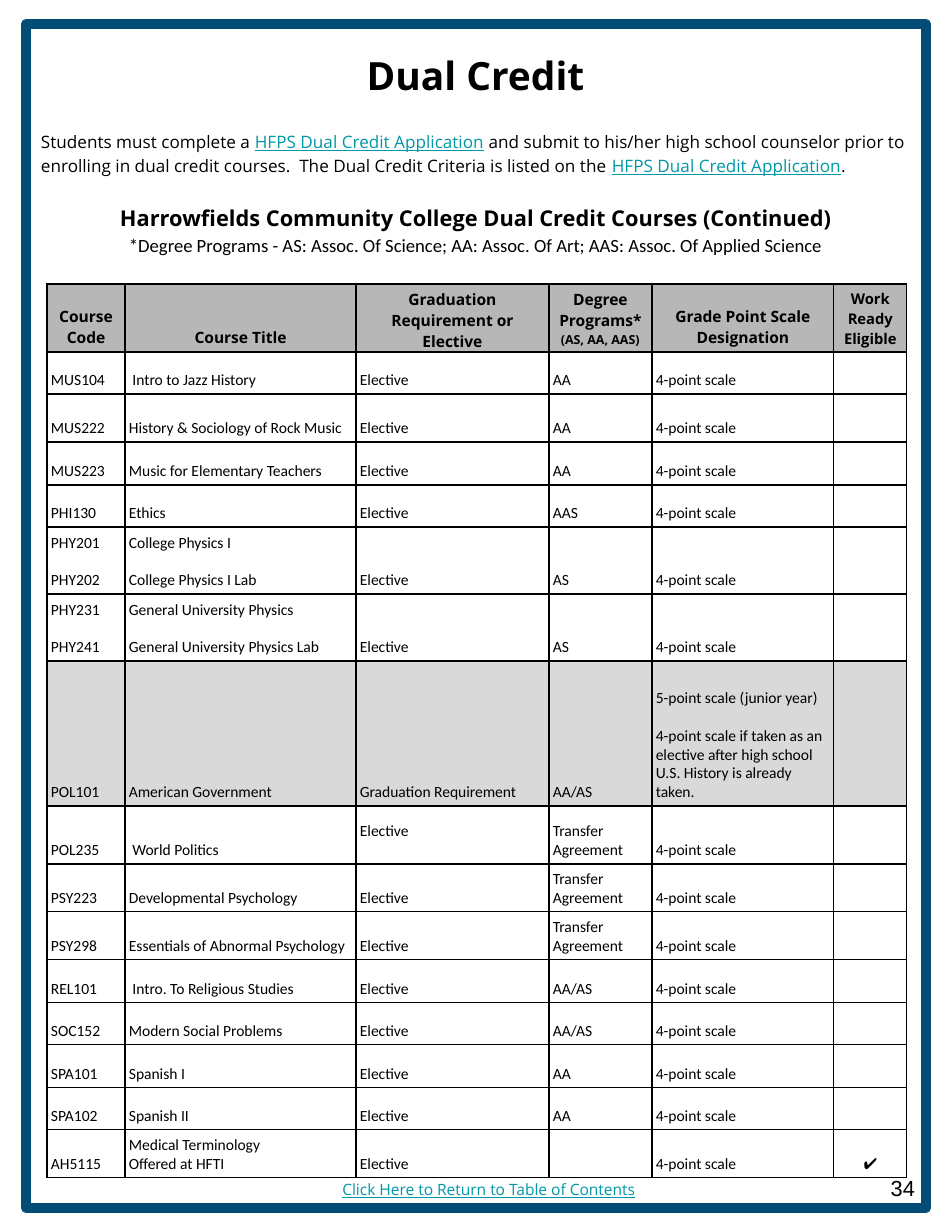
from lxml import etree
from pptx import Presentation
from pptx.dml.color import RGBColor
from pptx.enum.shapes import MSO_SHAPE
from pptx.enum.text import MSO_ANCHOR, PP_ALIGN
from pptx.oxml.ns import qn
from pptx.util import Emu, Inches, Pt

RECTANGLE = MSO_SHAPE.RECTANGLE
TOP, MIDDLE, BOTTOM = MSO_ANCHOR.TOP, MSO_ANCHOR.MIDDLE, MSO_ANCHOR.BOTTOM
LEFT, CENTER, RIGHT = PP_ALIGN.LEFT, PP_ALIGN.CENTER, PP_ALIGN.RIGHT

BLACK = RGBColor(0x00, 0x00, 0x00)
NAVY = RGBColor(0x02, 0x4C, 0x75)
TEAL = RGBColor(0x00, 0x97, 0xA7)
HEADER_GRAY = RGBColor(0xB7, 0xB7, 0xB7)
ROW_GRAY = RGBColor(0xD9, 0xD9, 0xD9)

HEADING_FONT, TABLE_FONT, NUMBER_FONT = "Open Sans", "Calibri", "Arial"
PX_PER_INCH = 112
CELL_INSET = 4
LINE_HEIGHT = 19
PARAGRAPH_GAP = Pt(12)

COLUMN_WIDTHS = [78, 231, 193, 103, 182, 73]
HEADER_HEIGHT = 68
HEADERS = [
    ("Course Code", 10, 4),
    ("Course Title", 10, 4),
    ("Graduation Requirement or Elective", 10, 0),
    ("Degree Programs*\n(AS, AA, AAS)", 10, 4),
    ("Grade Point Scale Designation", 10, 4),
    ("Work Ready Eligible", 9.5, 3),
]
ELECTIVE, FOUR_POINT = "Elective", "4-point scale"
TRANSFER = "Transfer Agreement"
POLITICS_GRADES = (
    "5-point scale (junior year)\n4-point scale if taken as an elective "
    "after high school U.S. History is already taken."
)
COURSES = [
    (42, "MUS104", " Intro to Jazz History", ELECTIVE, "AA", FOUR_POINT, ""),
    (48, "MUS222", "History & Sociology of Rock Music", ELECTIVE, "AA", FOUR_POINT, ""),
    (43, "MUS223", "Music for Elementary Teachers", ELECTIVE, "AA", FOUR_POINT, ""),
    (42, "PHI130", "Ethics", ELECTIVE, "AAS", FOUR_POINT, ""),
    (67, "PHY201\nPHY202", "College Physics I\nCollege Physics I Lab",
     ELECTIVE, "AS", FOUR_POINT, ""),
    (67, "PHY231\nPHY241", "General University Physics\nGeneral University Physics Lab",
     ELECTIVE, "AS", FOUR_POINT, ""),
    (145, "POL101", "American Government", "Graduation Requirement", "AA/AS",
     POLITICS_GRADES, ""),
    (58, "POL235", " World Politics", ELECTIVE, TRANSFER, FOUR_POINT, ""),
    (48, "PSY223", "Developmental Psychology", ELECTIVE, TRANSFER, FOUR_POINT, ""),
    (48, "PSY298", "Essentials of Abnormal Psychology", ELECTIVE, TRANSFER, FOUR_POINT, ""),
    (43, "REL101", " Intro. To Religious Studies", ELECTIVE, "AA/AS", FOUR_POINT, ""),
    (42, "SOC152", "Modern Social Problems", ELECTIVE, "AA/AS", FOUR_POINT, ""),
    (43, "SPA101", "Spanish I", ELECTIVE, "AA", FOUR_POINT, ""),
    (42, "SPA102", "Spanish II", ELECTIVE, "AA", FOUR_POINT, ""),
    (48, "AH5115", "Medical Terminology\nOffered at HFTI", ELECTIVE, "", FOUR_POINT, "✔"),
]
APPLICATION = "HFPS Dual Credit Application"


def px(length):
    return Emu(round(length * Inches(1) / PX_PER_INCH))


class SlideBuilder:
    def __init__(self, slide):
        self.slide = slide

    def style_run(self, run, size, font=HEADING_FONT, color=BLACK, bold=False):
        run.font.size = Pt(size)
        run.font.name = font
        run.font.color.rgb = color
        run.font.bold = bold
        run.font.underline = color == TEAL

    def place(self, shape, left, top, width, height):
        shape.left, shape.top = px(left), px(top)
        shape.width, shape.height = px(width), px(height)

    def frame(self, left, top, width, height):
        shape = self.slide.shapes.add_shape(
            RECTANGLE, px(left), px(top), px(width), px(height))
        shape.shadow.inherit = False
        shape.fill.background()
        shape.line.color.rgb = NAVY
        shape.line.width = Pt(6)
        etree.SubElement(shape.line._get_or_add_ln(), qn("a:round"))

    def title(self, text, *box):
        shape = self.slide.shapes.title
        self.place(shape, *box)
        text_frame = shape.text_frame
        text_frame.text = text
        text_frame.vertical_anchor = TOP
        text_frame.margin_top = text_frame.margin_bottom = px(13)
        paragraph = text_frame.paragraphs[0]
        paragraph.alignment = CENTER
        self.style_run(paragraph.runs[0], 25, bold=True)

    def text(self, box, paragraphs, alignment=LEFT, anchor=MIDDLE, spacing=1.0):
        shape = self.slide.shapes.add_textbox(*map(px, box))
        text_frame = shape.text_frame
        text_frame.word_wrap = True
        text_frame.vertical_anchor = anchor
        text_frame.margin_left = text_frame.margin_right = px(11)
        text_frame.margin_top = text_frame.margin_bottom = px(11)
        text_frame.text = "\n".join([""] * len(paragraphs))
        for paragraph, pieces in zip(text_frame.paragraphs, paragraphs):
            paragraph.alignment = alignment
            paragraph.line_spacing = spacing
            for text, style in pieces:
                run = paragraph.add_run()
                run.text = text
                self.style_run(run, **style)

    def border(self, cell):
        properties = cell._tc.get_or_add_tcPr()
        for side in ("a:lnL", "a:lnR", "a:lnT", "a:lnB"):
            line = etree.SubElement(properties, qn(side), w=str(Pt(1)))
            fill = etree.SubElement(line, qn("a:solidFill"))
            etree.SubElement(fill, qn("a:srgbClr"), val=str(BLACK))

    def cell(self, cell, text, alignment, fill, size=10, font=TABLE_FONT,
             bold=False, bottom=CELL_INSET):
        self.border(cell)
        if fill is None:
            cell.fill.background()
        else:
            cell.fill.solid()
            cell.fill.fore_color.rgb = fill
        cell.vertical_anchor = BOTTOM
        cell.margin_left = cell.margin_right = cell.margin_top = px(CELL_INSET)
        cell.margin_bottom = px(bottom)
        cell.text_frame.text = text
        for paragraph in cell.text_frame.paragraphs:
            paragraph.alignment = alignment
            for run in paragraph.runs:
                self.style_run(run, size, font, bold=bold)

    def course_table(self, left, top):
        heights = [HEADER_HEIGHT] + [course[0] for course in COURSES]
        table = self.slide.shapes.add_table(
            len(heights), len(COLUMN_WIDTHS), px(left), px(top),
            px(sum(COLUMN_WIDTHS)), px(sum(heights))).table
        table.first_row = table.horz_banding = False
        for column, width in zip(table.columns, COLUMN_WIDTHS):
            column.width = px(width)
        for row, height in zip(table.rows, heights):
            row.height = px(height)
        for column, (text, size, bottom) in enumerate(HEADERS):
            self.cell(table.cell(0, column), text, CENTER, HEADER_GRAY, size,
                      HEADING_FONT, True, bottom)
        table.cell(0, 3).text_frame.paragraphs[1].runs[0].font.size = Pt(8)
        for row, (_, code, *details) in enumerate(COURSES, 1):
            fill = ROW_GRAY if code == "POL101" else None
            for column, text in enumerate([code, *details]):
                raised = code == "POL235" and text == ELECTIVE
                cell = table.cell(row, column)
                self.cell(cell, text, CENTER if column == 5 else LEFT, fill,
                          bottom=CELL_INSET + LINE_HEIGHT * raised)
                if code != "AH5115":
                    for paragraph in cell.text_frame.paragraphs[1:]:
                        paragraph.space_before = PARAGRAPH_GAP


def main():
    presentation = Presentation()
    presentation.slide_width = Inches(8.5)
    presentation.slide_height = Inches(11)
    slide = presentation.slides.add_slide(presentation.slide_layouts[5])
    builder = SlideBuilder(slide)

    builder.frame(26, 24, 900, 1184)
    builder.title("Dual Credit", 105, 39, 741, 63)
    link = {"size": 11, "color": TEAL}
    plain = {"size": 11}
    builder.text((30, 123, 892, 58), [[
        ("Students must complete a ", plain),
        (APPLICATION, link),
        (" and submit to his/her high school counselor prior to enrolling in dual "
         "credit courses.  The Dual Credit Criteria is listed on the ", plain),
        (APPLICATION, link),
        (".", plain),
    ]], spacing=1.15)
    builder.text((30, 197, 892, 63), [
        [("Harrowfields Community College Dual Credit Courses (Continued)",
          {"size": 14, "bold": True})],
        [("*Degree Programs - AS: Assoc. Of Science; AA: Assoc. Of Art; "
          "AAS: Assoc. Of Applied Science", {"size": 12, "font": TABLE_FONT})],
    ], CENTER, spacing=1.15)
    builder.course_table(47, 284)
    builder.text((307, 1171, 339, 41), [
        [("Click Here to Return to Table of Contents", {"size": 10, "color": TEAL})],
    ], RIGHT, TOP)
    builder.text((876, 1174, 50, 27), [
        [("34", {"size": 14, "font": NUMBER_FONT})],
    ], RIGHT)

    presentation.save("out.pptx")


if __name__ == "__main__":
    main()
